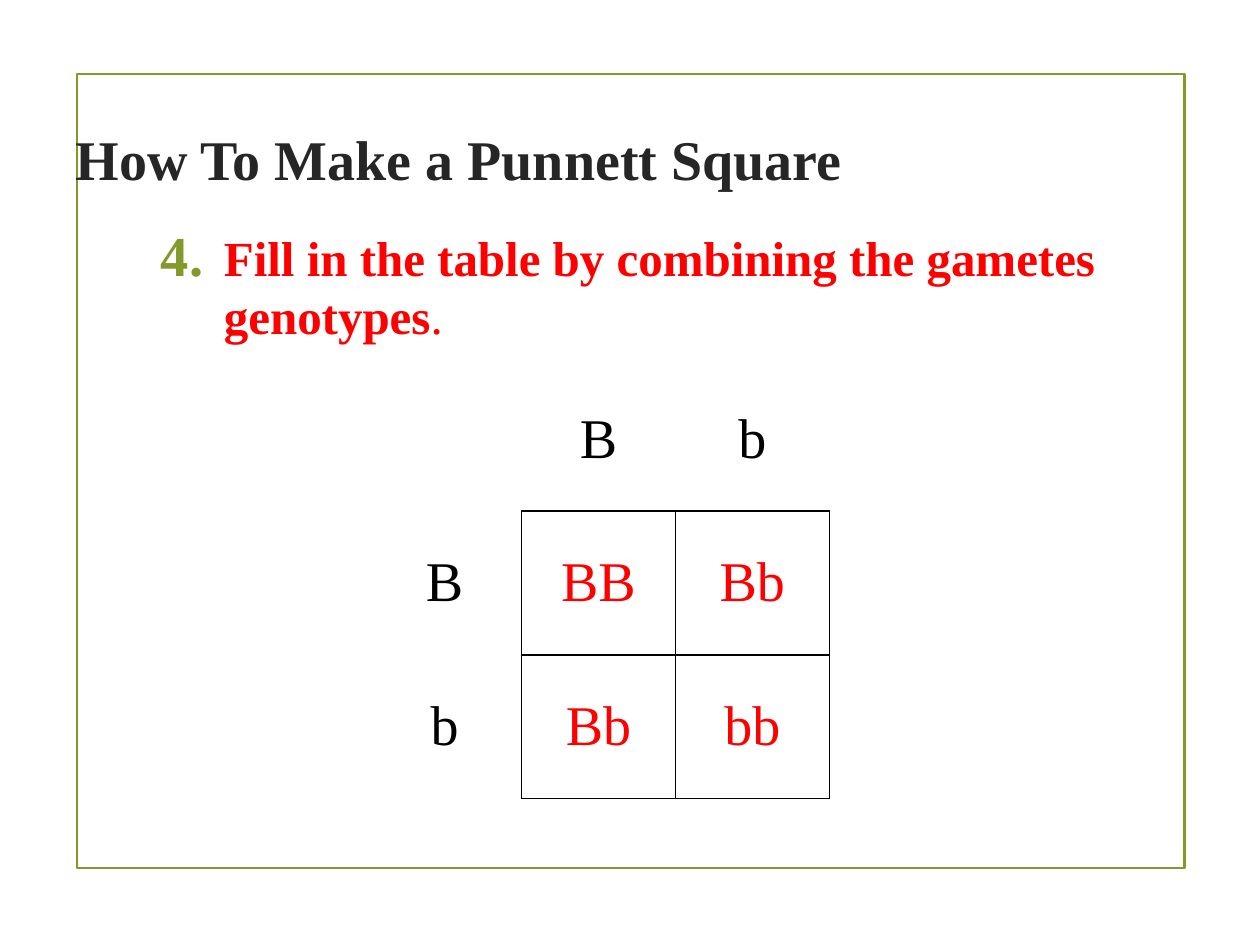
from lxml.etree import SubElement
from pptx import Presentation
from pptx.dml.color import RGBColor
from pptx.enum.shapes import MSO_SHAPE as Shape
from pptx.enum.text import MSO_ANCHOR as Anchor, MSO_AUTO_SIZE as AutoSize, PP_ALIGN as Align
from pptx.oxml import parse_xml
from pptx.oxml.ns import nsdecls, qn
from pptx.util import Cm, Pt

BLACK, WHITE, RED, GREEN, CHARCOAL = "000000", "FFFFFF", "FF0000", "83992A", "262626"
GAMETES = ["B", "b"]


def rgb(value):
    """Turn a hex string into a colour."""
    return RGBColor.from_string(value)


def write(paragraph, text, size=32, color=BLACK, bold=False, align=Align.LEFT):
    """Add formatted text to a paragraph."""
    paragraph.alignment = align
    run = paragraph.add_run()
    run.text = text
    font = run.font
    font.name, font.size, font.bold = "Times New Roman", Pt(size), bold
    font.color.rgb = rgb(color)


def place(holder, left, top, width, height, anchor):
    """Move a placeholder and return its first paragraph."""
    holder.left, holder.top, holder.width, holder.height = map(Cm, (left, top, width, height))
    frame = holder.text_frame
    frame.word_wrap, frame.auto_size, frame.vertical_anchor = True, AutoSize.NONE, anchor
    return frame.paragraphs[0]


def add_border(slide):
    """Draw the green frame behind the content."""
    border = slide.shapes.add_shape(Shape.RECTANGLE, Cm(1.55), Cm(1.5), Cm(22.33), Cm(16))
    border.shadow.inherit = False
    border.fill.background()
    border.line.color.rgb = rgb(GREEN)
    border.line.width = Pt(1.25)
    slide.shapes._spTree.insert(2, border._element)


def number_step(paragraph, start):
    """Give a paragraph a hanging green number."""
    props = paragraph._p.get_or_add_pPr()
    props.set("marL", str(Cm(2.36)))
    props.set("indent", str(Cm(-1.27)))
    color = SubElement(props, qn("a:buClr"))
    SubElement(color, qn("a:srgbClr"), val=GREEN)
    SubElement(props, qn("a:buSzPct"), val="115000")
    SubElement(props, qn("a:buFont"), typeface="Times New Roman")
    SubElement(props, qn("a:buAutoNum"), type="arabicPeriod", startAt=str(start))
    paragraph.space_before, paragraph.space_after = Pt(0), Pt(6)


def is_offspring(row, column):
    """Tell whether a position lies inside the square of offspring."""
    return 1 <= row <= len(GAMETES) and 1 <= column <= len(GAMETES)


def outline_cell(cell, row, column):
    """Draw black edges around offspring and white edges elsewhere."""
    cell.fill.background()
    neighbours = {"L": (row, column - 1), "R": (row, column + 1),
                  "T": (row - 1, column), "B": (row + 1, column)}
    for index, (side, neighbour) in enumerate(neighbours.items()):
        color = BLACK if is_offspring(row, column) or is_offspring(*neighbour) else WHITE
        cell._tc.get_or_add_tcPr().insert(index, parse_xml(
            f'<a:ln{side} {nsdecls("a")} w="{Pt(1)}"><a:solidFill>'
            f'<a:srgbClr val="{color}"/></a:solidFill></a:ln{side}>'))


def add_punnett_square(slide):
    """Add the table that crosses the gametes."""
    count = len(GAMETES) + 1
    square = slide.shapes.add_table(count, count, Cm(7.41), Cm(7.41), Cm(9.31), Cm(8.69)).table
    square.first_row = square.horz_banding = False
    genotypes = [["", *GAMETES]]
    for gamete in GAMETES:
        genotypes.append([gamete, *("".join(sorted(gamete + other)) for other in GAMETES)])
    for row, line in enumerate(genotypes):
        for column, genotype in enumerate(line):
            cell = square.cell(row, column)
            outline_cell(cell, row, column)
            cell.vertical_anchor = Anchor.MIDDLE
            if genotype:
                write(cell.text_frame.paragraphs[0], genotype, align=Align.CENTER,
                      color=RED if is_offspring(row, column) else BLACK)


def main():
    """Build the slide and save it."""
    deck = Presentation()
    deck.slide_width, deck.slide_height = Cm(25.4), Cm(19.05)
    slide = deck.slides.add_slide(deck.slide_layouts[1])
    add_border(slide)
    heading = place(slide.shapes.title, 1.27, 1.7, 23.28, 2.96, Anchor.MIDDLE)
    write(heading, "How To Make a Punnett Square", color=CHARCOAL, bold=True)
    step = place(slide.placeholders[1], 1.9, 4.45, 22.23, 12.57, Anchor.TOP)
    number_step(step, 4)
    write(step, "Fill in the table by combining the gametes genotypes", size=28, color=RED, bold=True)
    write(step, ".", size=28, color=RED)
    add_punnett_square(slide)
    deck.save("out.pptx")


if __name__ == "__main__":
    main()
